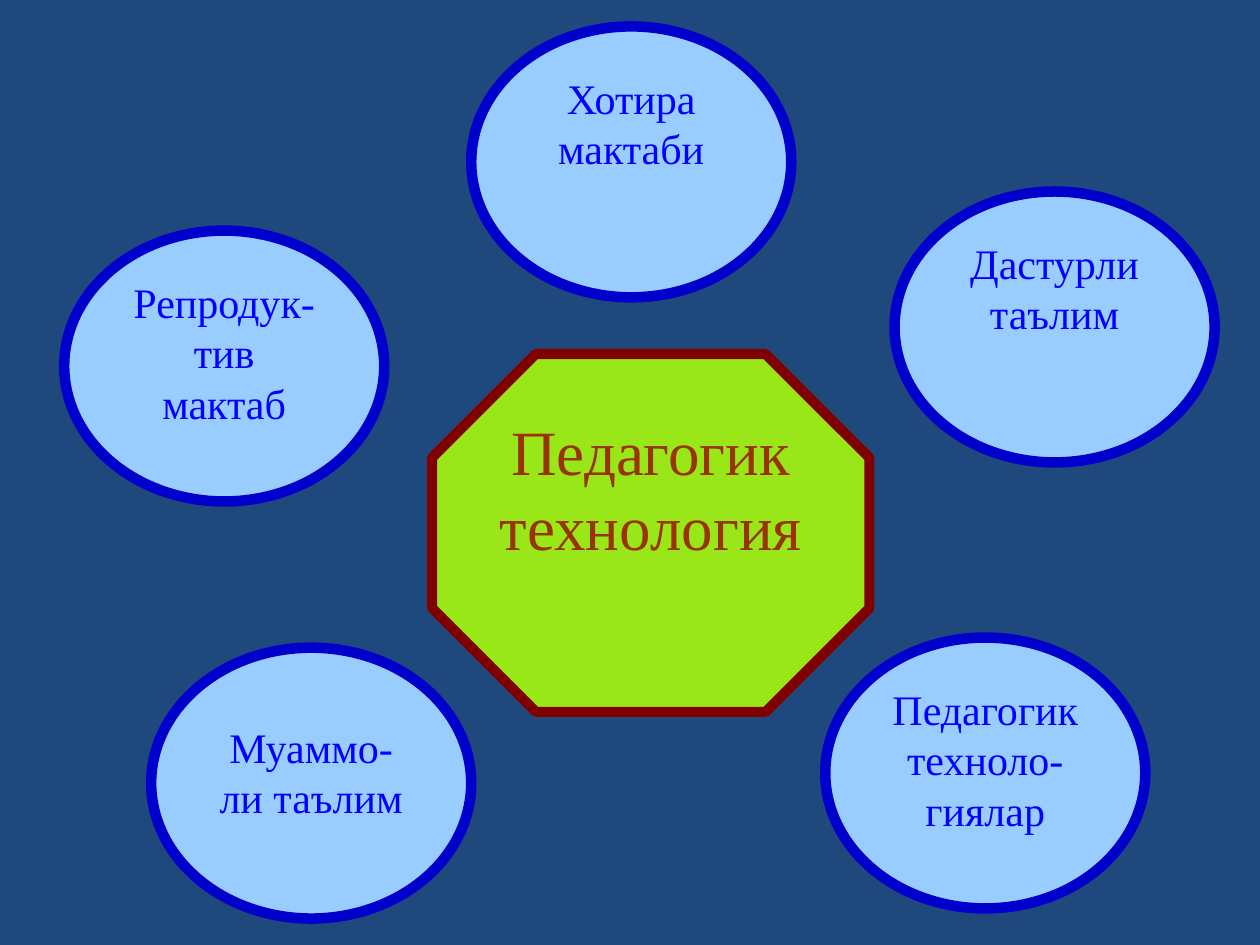
from pptx import Presentation
from pptx.dml.color import RGBColor
from pptx.enum.shapes import MSO_SHAPE
from pptx.enum.text import MSO_ANCHOR, PP_ALIGN
from pptx.util import Inches, Pt

SCHOOL_SIZE = (2.54, 2.15)
SCHOOLS = [
    ("Репродук-\vтив\vмактаб", 0.51, 1.83, 0.05),
    ("Хотира мактаби", 3.74, 0.21, 0.05),
    ("Муаммо-ли таълим", 1.2, 5.14, 0.27),
    ("Педагогик техноло- гиялар", 6.55, 5.06, 0.05),
    ("Дастурли таълим", 7.1, 1.52, 0.05),
]


def color(value):
    return RGBColor.from_string(value)


def write_text(shape, text, *, size, font_color, top_inset=0.05):
    frame = shape.text_frame
    frame.word_wrap = True
    frame.vertical_anchor = MSO_ANCHOR.TOP
    frame.margin_left = frame.margin_right = Inches(0.1)
    frame.margin_top = Inches(top_inset)
    frame.margin_bottom = Inches(0.05)
    frame.text = text
    paragraph = frame.paragraphs[0]
    paragraph.alignment = PP_ALIGN.CENTER
    for run in paragraph.runs:
        run.font.name = "Times New Roman"
        run.font.size = Pt(size)
        run.font.color.rgb = color(font_color)


def add_outlined_shape(slide, kind, left, top, width, height, *, fill, line, line_width):
    shape = slide.shapes.add_shape(
        kind, Inches(left), Inches(top), Inches(width), Inches(height)
    )
    shape.shadow.inherit = False
    shape.fill.solid()
    shape.fill.fore_color.rgb = color(fill)
    shape.line.color.rgb = color(line)
    shape.line.width = Pt(line_width)
    return shape


def add_topic(slide):
    octagon = add_outlined_shape(
        slide, MSO_SHAPE.OCTAGON, 3.43, 2.81, 3.47, 2.84,
        fill="99E719", line="800000", line_width=5.75,
    )
    octagon.adjustments[0] = 0.29
    write_text(octagon, "Педагогик технология", size=36, font_color="993300")


def add_school(slide, text, left, top, top_inset):
    ellipse = add_outlined_shape(
        slide, MSO_SHAPE.OVAL, left, top, *SCHOOL_SIZE,
        fill="99CCFF", line="0000CC", line_width=6,
    )
    write_text(ellipse, text, size=24, font_color="0000FF", top_inset=top_inset)


def main():
    presentation = Presentation()
    presentation.slide_width = Inches(10)
    presentation.slide_height = Inches(7.5)
    slide = presentation.slides.add_slide(presentation.slide_layouts[6])
    slide.background.fill.solid()
    slide.background.fill.fore_color.rgb = color("1F497D")
    add_topic(slide)
    for school in SCHOOLS:
        add_school(slide, *school)
    presentation.save("out.pptx")


if __name__ == "__main__":
    main()
